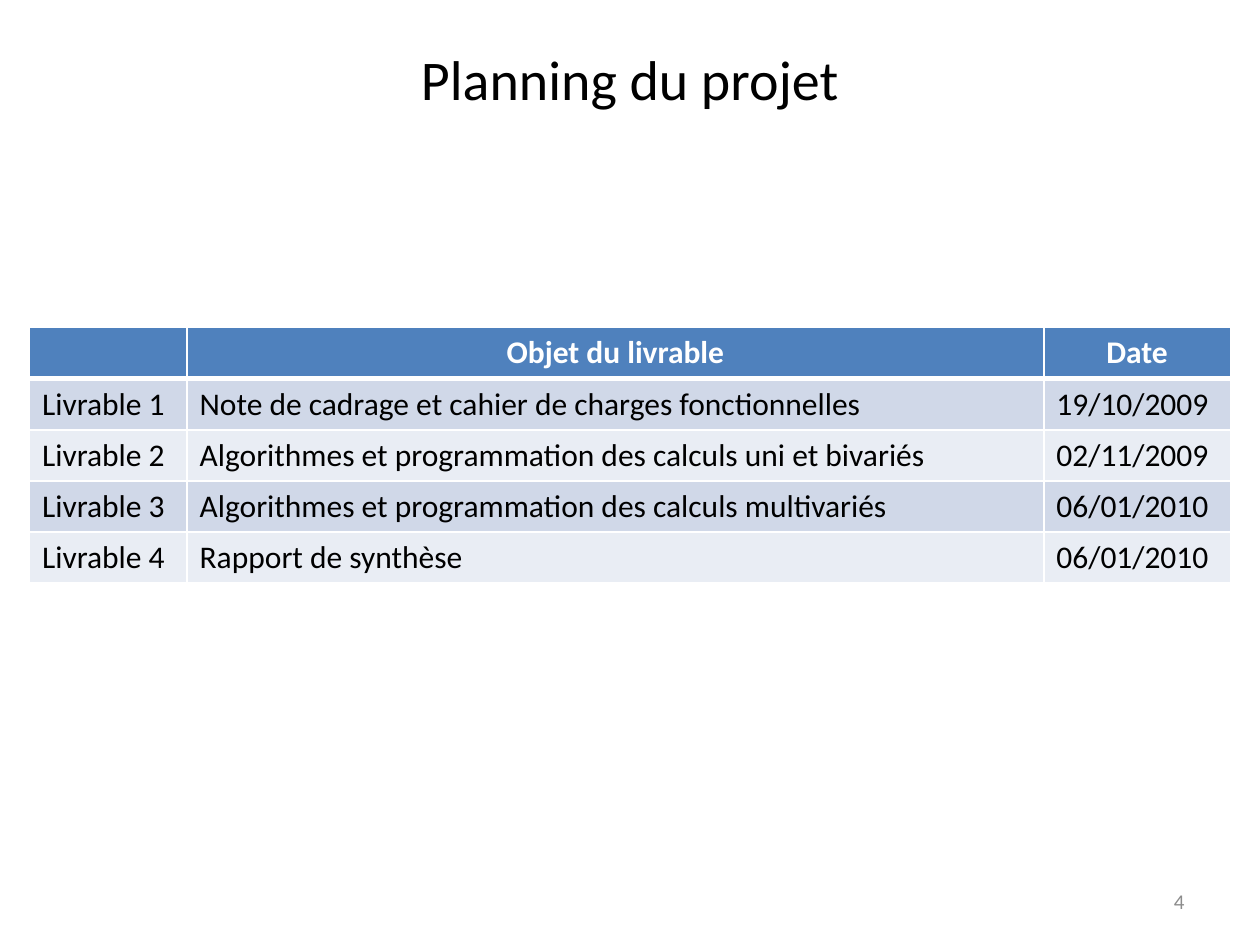
from lxml.etree import SubElement
from pptx import Presentation
from pptx.dml.color import RGBColor
from pptx.enum.text import MSO_ANCHOR, PP_ALIGN
from pptx.oxml.ns import qn
from pptx.util import Pt

FONT = "Calibri"
BLACK = RGBColor(0x00, 0x00, 0x00)
WHITE = RGBColor(0xFF, 0xFF, 0xFF)
GREY = RGBColor(0x8C, 0x8C, 0x8C)
BLUE = RGBColor(0x4F, 0x81, 0xBD)
BANDS = (RGBColor(0xD0, 0xD8, 0xE8), RGBColor(0xE9, 0xED, 0xF4))

COL_WIDTHS = (90, 489.6, 106.6)
ROW_HEIGHT = 29.2
ROWS = (
    ("", "Objet du livrable", "Date"),
    ("Livrable 1", "Note de cadrage et cahier de charges fonctionnelles", "19/10/2009"),
    ("Livrable 2", "Algorithmes et programmation des calculs uni et bivariés", "02/11/2009"),
    ("Livrable 3", "Algorithmes et programmation des calculs multivariés", "06/01/2010"),
    ("Livrable 4", "Rapport de synthèse", "06/01/2010"),
)


def format_paragraph(p, size, color, align, bold=False):
    p.alignment = align
    p.font.name = FONT
    p.font.size = Pt(size)
    p.font.bold = bold
    p.font.color.rgb = color


def set_borders(cell, top, bottom):
    tcPr = cell._tc.get_or_add_tcPr()
    for side, width in (("L", 1), ("R", 1), ("T", top), ("B", bottom)):
        ln = SubElement(tcPr, qn(f"a:ln{side}"), w=str(Pt(width)))
        fill = SubElement(ln, qn("a:solidFill"))
        SubElement(fill, qn("a:srgbClr"), val=str(WHITE))


def add_title(s, text, left, top, width, height):
    sp = s.shapes.title
    sp.left, sp.top, sp.width, sp.height = Pt(left), Pt(top), Pt(width), Pt(height)
    tf = sp.text_frame
    tf.text = text
    tf.vertical_anchor = MSO_ANCHOR.MIDDLE
    format_paragraph(tf.paragraphs[0], 32, BLACK, PP_ALIGN.CENTER)


def add_schedule(s, left, top):
    frame = s.shapes.add_table(
        len(ROWS), len(COL_WIDTHS), Pt(left), Pt(top),
        Pt(sum(COL_WIDTHS)), Pt(ROW_HEIGHT * len(ROWS)),
    )
    table = frame.table
    for column, width in zip(table.columns, COL_WIDTHS):
        column.width = Pt(width)
    for i, values in enumerate(ROWS):
        header = i == 0
        table.rows[i].height = Pt(ROW_HEIGHT)
        for cell, value in zip(table.rows[i].cells, values):
            set_borders(cell, top=3 if i == 1 else 1, bottom=3 if header else 1)
            cell.fill.solid()
            cell.fill.fore_color.rgb = BLUE if header else BANDS[(i - 1) % 2]
            cell.text = value
            format_paragraph(
                cell.text_frame.paragraphs[0], 18,
                WHITE if header else BLACK,
                PP_ALIGN.CENTER if header else PP_ALIGN.LEFT,
                bold=header,
            )


def add_page_number(s, number, left, top, width, height):
    sp = s.shapes.add_textbox(Pt(left), Pt(top), Pt(width), Pt(height))
    tf = sp.text_frame
    tf.word_wrap = True
    tf.vertical_anchor = MSO_ANCHOR.MIDDLE
    tf.text = number
    format_paragraph(tf.paragraphs[0], 12, GREY, PP_ALIGN.RIGHT)


def main():
    prs = Presentation()
    prs.slide_width, prs.slide_height = Pt(720), Pt(540)
    s = prs.slides.add_slide(prs.slide_layouts[5])
    add_title(s, "Planning du projet", 36, 21.6, 648, 46)
    add_schedule(s, 16.9, 187.2)
    add_page_number(s, "4", 516, 500.5, 168, 28.75)
    prs.save("out.pptx")


if __name__ == "__main__":
    main()
